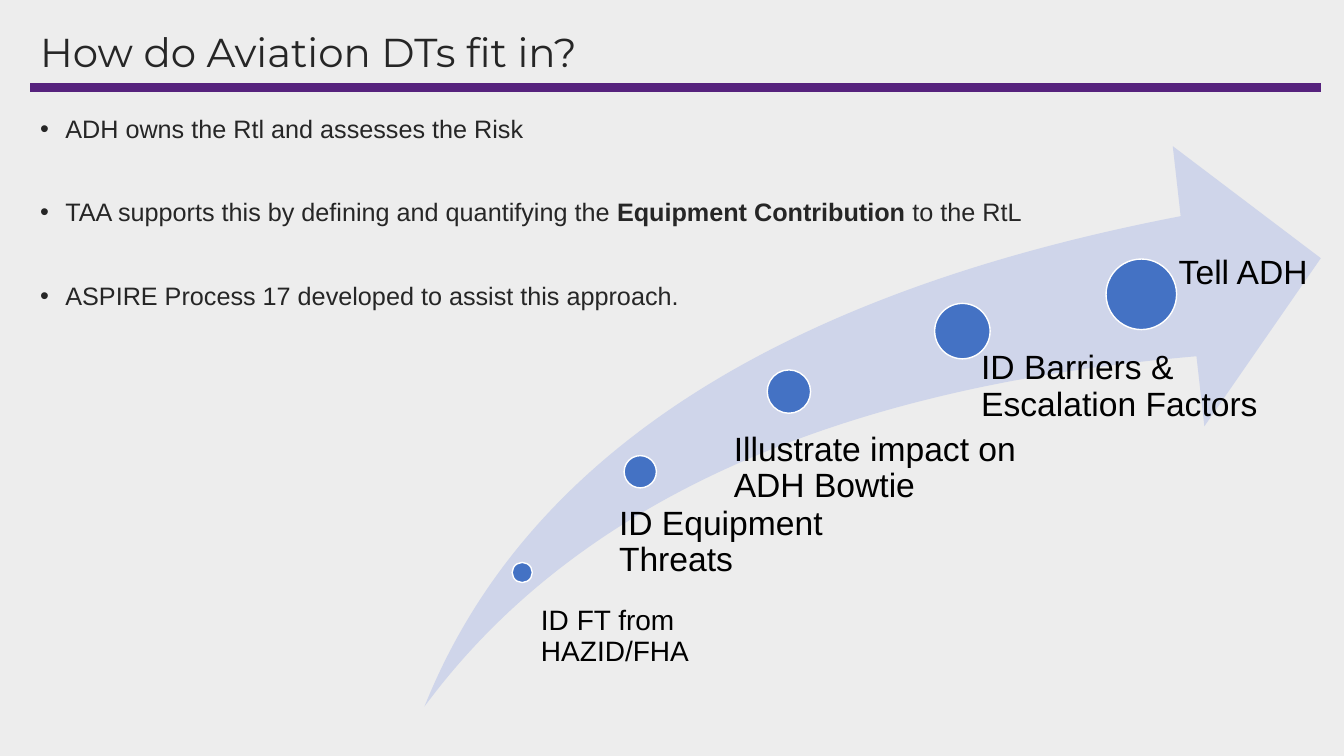
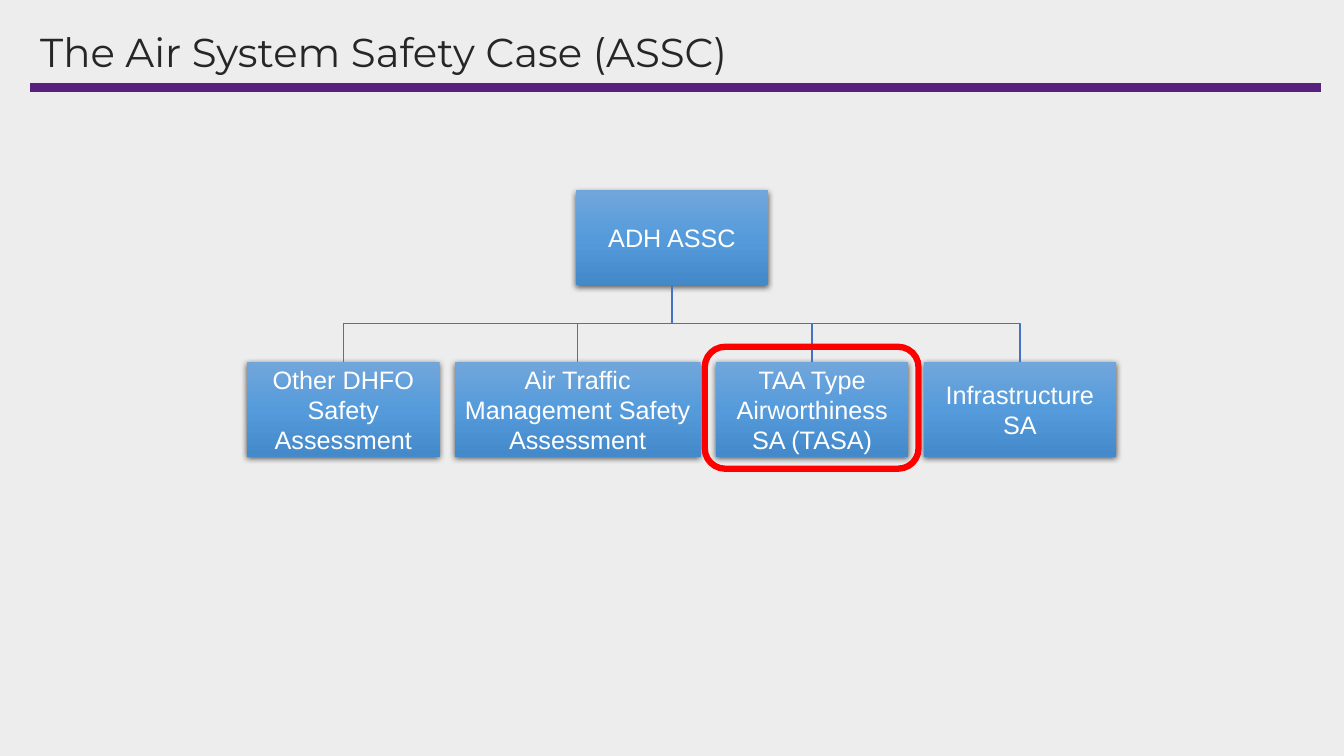
from lxml import etree
from pptx import Presentation
from pptx.dml.color import RGBColor
from pptx.enum.shapes import MSO_CONNECTOR, MSO_SHAPE
from pptx.enum.text import MSO_ANCHOR, PP_ALIGN
from pptx.oxml.ns import qn
from pptx.util import Inches, Pt

STRAIGHT, ELBOW = MSO_CONNECTOR.STRAIGHT, MSO_CONNECTOR.ELBOW
RECT, ROUNDED = MSO_SHAPE.RECTANGLE, MSO_SHAPE.ROUNDED_RECTANGLE
OVAL, SWOOSH = MSO_SHAPE.OVAL, MSO_SHAPE.SWOOSH_ARROW
TOP, MIDDLE = MSO_ANCHOR.TOP, MSO_ANCHOR.MIDDLE
LEFT, CENTER = PP_ALIGN.LEFT, PP_ALIGN.CENTER

COLORS = {
    "background": "EDEDED", "rule": "56227D", "text": "262626", "black": "000000",
    "white": "FFFFFF", "blue": "4472C4", "swoosh": "CFD5EA", "highlight": "FF0000",
    "box_top": "71A6DB", "box_mid": "559BDB", "box_end": "448ACA",
}
BODY, HEADING = "Arial", "Montserrat"


def rgb(name):
    return RGBColor.from_string(COLORS[name])


def sub(parent, tag, **attrs):
    return etree.SubElement(parent, qn(tag), {k: str(v) for k, v in attrs.items()})


def write(p, text, size=18, color="text", font=BODY, bold=False, align=LEFT, spacing=0.9):
    p.alignment, p.line_spacing = align, spacing
    r = p.add_run()
    r.text = text
    r.font.size, r.font.name, r.font.bold = Pt(size), font, bold
    r.font.color.rgb = rgb(color)


class Deck:
    """Shared slide style and the elements drawn on the current slide."""

    def __init__(self):
        self.prs = Presentation()
        self.prs.slide_width, self.prs.slide_height = Inches(13.33), Inches(7.5)

    def slide(self, title):
        self.s = self.prs.slides.add_slide(self.prs.slide_layouts[6])
        self.s.background.fill.solid()
        self.s.background.fill.fore_color.rgb = rgb("background")
        self.line(STRAIGHT, (0.3, 0.87), (13.1, 0.87), "rule", 6)
        tf = self.textbox(0.3, 0.28, 12.8, 0.53, anchor=MIDDLE)
        write(tf.paragraphs[0], title, size=28.8, font=HEADING)

    def frame(self, sp, anchor, insets):
        tf = sp.text_frame
        tf.word_wrap, tf.vertical_anchor = True, anchor
        tf.margin_left, tf.margin_top, tf.margin_right, tf.margin_bottom = map(Inches, insets)
        return tf

    def textbox(self, x, y, w, h, anchor=TOP, insets=(0.1, 0.05, 0.1, 0.05)):
        sp = self.s.shapes.add_textbox(Inches(x), Inches(y), Inches(w), Inches(h))
        return self.frame(sp, anchor, insets)

    def line(self, kind, start, end, color, width):
        c = self.s.shapes.add_connector(kind, *map(Inches, start + end))
        c.line.color.rgb, c.line.width = rgb(color), Pt(width)
        sub(c._element.spPr, "a:effectLst")
        return c

    def shape(self, kind, x, y, w, h, fill=None, line=None, width=1):
        sp = self.s.shapes.add_shape(kind, Inches(x), Inches(y), Inches(w), Inches(h))
        sp.shadow.inherit = False
        if fill:
            sp.fill.solid()
            sp.fill.fore_color.rgb = rgb(fill)
        else:
            sp.fill.background()
        if line:
            sp.line.color.rgb, sp.line.width = rgb(line), Pt(width)
        else:
            sp.line.fill.background()
        return sp

    def bullets(self, x, y, w, h, items, gap):
        tf = self.textbox(x, y, w, h)
        for i, runs in enumerate(items):
            p = tf.add_paragraph() if i else tf.paragraphs[0]
            pPr = p._p.get_or_add_pPr()
            pPr.set("marL", str(Inches(0.25)))
            pPr.set("indent", str(-Inches(0.25)))
            sub(pPr, "a:buFont", typeface=BODY)
            sub(pPr, "a:buChar", char="•")
            p.space_before = Pt(gap if i else 0)
            for text, bold in runs:
                write(p, text, bold=bold)

    def step(self, dot, label, text, size):
        x, y, d = dot
        self.shape(OVAL, x, y, d, d, "blue", "white")
        tf = self.textbox(*label, insets=(0.53 * d, 0, 0, 0))
        write(tf.paragraphs[0], text, size=size, color="black")

    def box(self, x, y, w, h, text):
        sp = self.shape(RECT, x, y, w, h)
        sp.fill.gradient()
        sp.fill.gradient_angle = 270
        spPr = sp._element.spPr
        stops = spPr.find(".//" + qn("a:gsLst"))
        stops.clear()
        for pos, name in ((0, "box_top"), (50000, "box_mid"), (100000, "box_end")):
            sub(sub(stops, "a:gs", pos=pos), "a:srgbClr", val=COLORS[name])
        shadow = sub(spPr.find(qn("a:effectLst")), "a:outerShdw", blurRad=Pt(4.5),
                     dist=Pt(1.5), dir=5400000, algn="ctr", rotWithShape=0)
        sub(sub(shadow, "a:srgbClr", val=COLORS["black"]), "a:alpha", val=63000)
        tf = self.frame(sp, MIDDLE, (0.08, 0.05, 0.08, 0.05))
        write(tf.paragraphs[0], text, color="white", align=CENTER, spacing=1.0)

    def branch(self, parent, child):
        (px, py), (cx, cy) = parent, child
        mx, my = (px + cx) / 2, (py + cy) / 2
        half_drop, half_run = (cy - py) / 2, (px - cx) / 2
        c = self.line(ELBOW, (mx - half_drop, my - half_run),
                      (mx + half_drop, my + half_run), "blue", 1)
        turn = 90 if half_run > 0 else 270
        c._element.spPr.find(qn("a:xfrm")).set("rot", str(turn * 60000))


def aviation_slide(deck):
    deck.slide("How do Aviation DTs fit in?")
    deck.bullets(0.3, 1.11, 12.39, 5.12, [
        [("ADH owns the Rtl and assesses the Risk", False)],
        [("TAA supports this by defining and quantifying the ", False),
         ("Equipment Contribution ", True), ("to the RtL", False)],
        [("ASPIRE Process 17 developed to assist this approach.", False)],
    ], gap=40)
    swoosh = deck.shape(SWOOSH, 4.21, 1.45, 8.89, 5.56, "swoosh")
    swoosh.adjustments[0] = swoosh.adjustments[1] = 0.25
    steps = [
        ((5.08, 5.58, 0.2), (5.26, 6.02, 2.46, 0.37), "ID FT from HAZID/FHA", 20),
        ((6.19, 4.52, 0.32), (5.97, 5.02, 2.49, 0.77), "ID Equipment Threats", 24),
        ((7.61, 3.67, 0.43), (7.05, 4.29, 3.05, 0.94), "Illustrate impact on ADH Bowtie", 24),
        ((9.27, 3.01, 0.55), (9.44, 3.48, 3.51, 1.12), "ID Barriers & Escalation Factors", 24),
        ((10.97, 2.57, 0.7), (11.32, 2.53, 1.78, 1.28), "Tell ADH", 24),
    ]
    for step in steps:
        deck.step(*step)


def safety_case_slide(deck):
    deck.slide("The Air System Safety Case (ASSC)")
    width, height, gap, root_y, row_y = 1.91, 0.94, 0.15, 1.89, 3.59
    root_x = 5.71
    deck.box(root_x, root_y, width, height, "ADH ASSC")
    children = [
        ("Other DHFO Safety Assessment", width),
        ("Air Traffic Management Safety Assessment", 2.44),
        ("TAA Type Airworthiness SA (TASA)", width),
        ("Infrastructure SA", width),
    ]
    x, lefts = 2.45, []
    for text, w in children:
        deck.box(x, row_y, w, height, text)
        lefts.append(x)
        x += w + gap
    for left, (_, w) in zip(lefts, children):
        deck.branch((root_x + width / 2, root_y + height), (left + w / 2, row_y))
    deck.shape(ROUNDED, lefts[2] - 0.11, 3.44, 2.12, 1.21, line="highlight", width=4.5)


def main():
    deck = Deck()
    aviation_slide(deck)
    safety_case_slide(deck)
    deck.prs.save("out.pptx")


if __name__ == "__main__":
    main()
